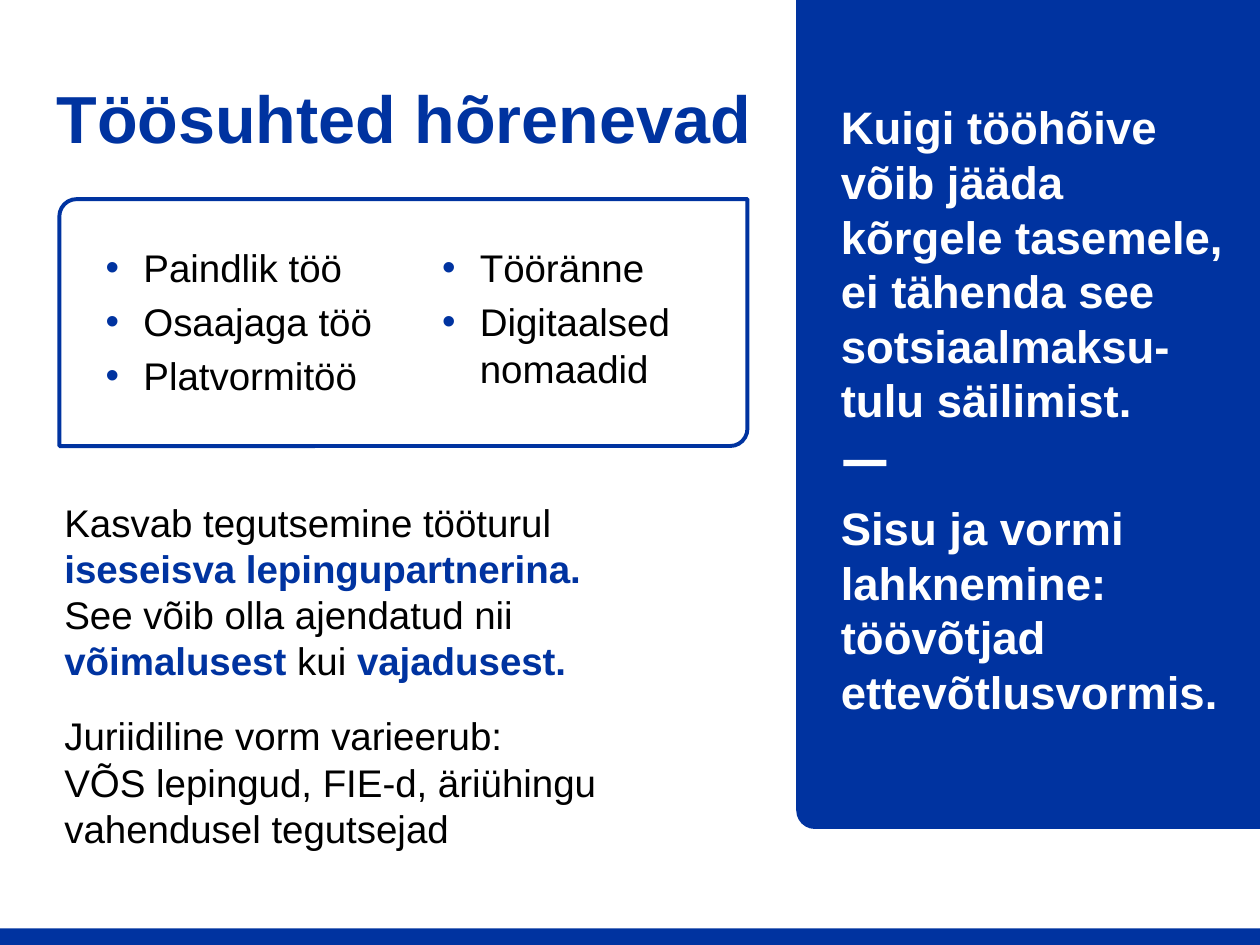
from dataclasses import dataclass

from lxml.etree import SubElement
from pptx import Presentation
from pptx.dml.color import RGBColor
from pptx.enum.shapes import MSO_SHAPE as Preset
from pptx.enum.text import MSO_ANCHOR as Anchor
from pptx.oxml.ns import qn
from pptx.util import Pt


@dataclass(frozen=True)
class Theme:
    blue: RGBColor = RGBColor(0x00, 0x33, 0xA0)
    white: RGBColor = RGBColor(0xFF, 0xFF, 0xFF)
    black: RGBColor = RGBColor(0x00, 0x00, 0x00)
    font: str = "Arial"
    title_size: float = 38
    side_size: float = 26
    body_size: float = 22
    gap: float = 4.5
    indent: float = 21.6


@dataclass(frozen=True)
class Box:
    left: float
    top: float
    width: float
    height: float

    def lengths(self) -> tuple:
        return Pt(self.left), Pt(self.top), Pt(self.width), Pt(self.height)


@dataclass(frozen=True)
class Span:
    text: str
    color: RGBColor
    bold: bool = False


@dataclass(frozen=True)
class Para:
    lines: tuple[tuple[Span, ...], ...]
    before: float = 0
    after: float = 0
    margin: float = 0
    bullet: bool = False


THEME = Theme()


def plain(text: str) -> Span:
    return Span(text, THEME.black)


def strong(text: str, color: RGBColor = THEME.blue) -> Span:
    return Span(text, color, True)


def add_bullet(paragraph) -> None:
    properties = paragraph._p.get_or_add_pPr()
    properties.set("marL", str(Pt(THEME.indent)))
    properties.set("indent", str(-Pt(THEME.indent)))
    color = SubElement(properties, qn("a:buClr"))
    SubElement(color, qn("a:srgbClr"), val=str(THEME.blue))
    SubElement(properties, qn("a:buFont"), typeface=THEME.font)
    SubElement(properties, qn("a:buChar"), char="•")


def add_text(slide, box: Box, paras: list[Para], size: float, anchor=Anchor.TOP) -> None:
    frame = slide.shapes.add_textbox(*box.lengths()).text_frame
    frame.word_wrap = True
    frame.vertical_anchor = anchor
    for number, para in enumerate(paras):
        paragraph = frame.add_paragraph() if number else frame.paragraphs[0]
        if para.bullet:
            add_bullet(paragraph)
        elif para.margin:
            paragraph._p.get_or_add_pPr().set("marL", str(Pt(para.margin)))
        paragraph.space_before = Pt(para.before)
        paragraph.space_after = Pt(para.after)
        for row, line in enumerate(para.lines):
            if row:
                paragraph.add_line_break()
            for span in line:
                run = paragraph.add_run()
                run.text = span.text
                run.font.name = THEME.font
                run.font.size = Pt(size)
                run.font.bold = span.bold
                run.font.color.rgb = span.color


def add_bullets(slide, box: Box, items: list[str]) -> None:
    paras = [
        Para(((plain(item),),), before=THEME.gap if number else 0, bullet=True)
        for number, item in enumerate(items)
    ]
    add_text(slide, box, paras, THEME.body_size)


def add_block(slide, preset, box: Box, fill: RGBColor):
    """Draw a filled preset shape without outline or shadow."""
    block = slide.shapes.add_shape(preset, *box.lengths())
    block.shadow.inherit = False
    block.fill.solid()
    block.fill.fore_color.rgb = fill
    block.line.fill.background()
    return block


def main() -> None:
    deck = Presentation()
    deck.slide_width, deck.slide_height = Pt(720), Pt(540)
    slide = deck.slides.add_slide(deck.slide_layouts[6])

    add_block(slide, Preset.RECTANGLE, Box(0, 530.6, 720, 9.4), THEME.blue)

    work_forms = add_block(
        slide, Preset.ROUND_2_DIAG_RECTANGLE, Box(33.9, 113.8, 393.2, 141.1), THEME.white
    )
    work_forms.adjustments[0] = 0.07
    work_forms.line.color.rgb = THEME.blue
    work_forms.line.width = Pt(2.25)

    side_panel = add_block(
        slide, Preset.ROUND_1_RECTANGLE, Box(455, -7.9, 265, 481.6), THEME.blue
    )
    side_panel.adjustments[0] = 0.04
    side_panel.rotation = 180

    title = Para(((strong("Töösuhted hõrenevad"),),))
    add_text(slide, Box(25.2, 21.6, 648, 90), [title], THEME.title_size, Anchor.MIDDLE)

    add_bullets(slide, Box(53.3, 136.1, 187.2, 95),
                ["Paindlik töö", "Osaajaga töö", "Platvormitöö"])

    message = Para(
        (
            (strong("Kuigi tööhõive võib jääda kõrgele tasemele, "
                    "ei tähenda see sotsiaalmaksu-", THEME.white),),
            (strong("tulu säilimist.", THEME.white),),
        ),
        after=42, margin=27,
    )
    conclusion = Para(
        ((strong("Sisu ja vormi lahknemine: töövõtjad ettevõtlusvormis.", THEME.white),),),
        after=12, margin=27,
    )
    add_text(slide, Box(446.4, 53.3, 263.5, 365), [message, conclusion], THEME.side_size)

    partnership = Para(
        (
            (plain("Kasvab tegutsemine tööturul"),),
            (strong("iseseisva lepingupartnerina."),),
            (plain("See võib olla ajendatud nii "), strong("võimalusest "),
             plain("kui "), strong("vajadusest.")),
        ),
        after=12,
    )
    legal_form = Para(
        (
            (plain("Juriidiline vorm varieerub:"),),
            (plain("VÕS lepingud, FIE-d, äriühingu vahendusel tegutsejad"),),
        ),
        before=THEME.gap,
    )
    add_text(slide, Box(29.7, 281.5, 393.2, 195), [partnership, legal_form], THEME.body_size)

    add_bullets(slide, Box(245.5, 136.1, 166.3, 110), ["Tööränne", "Digitaalsed nomaadid"])

    add_block(slide, Preset.RECTANGLE, Box(482, 262.8, 24.5, 3.6), THEME.white)

    deck.save("out.pptx")


if __name__ == "__main__":
    main()
